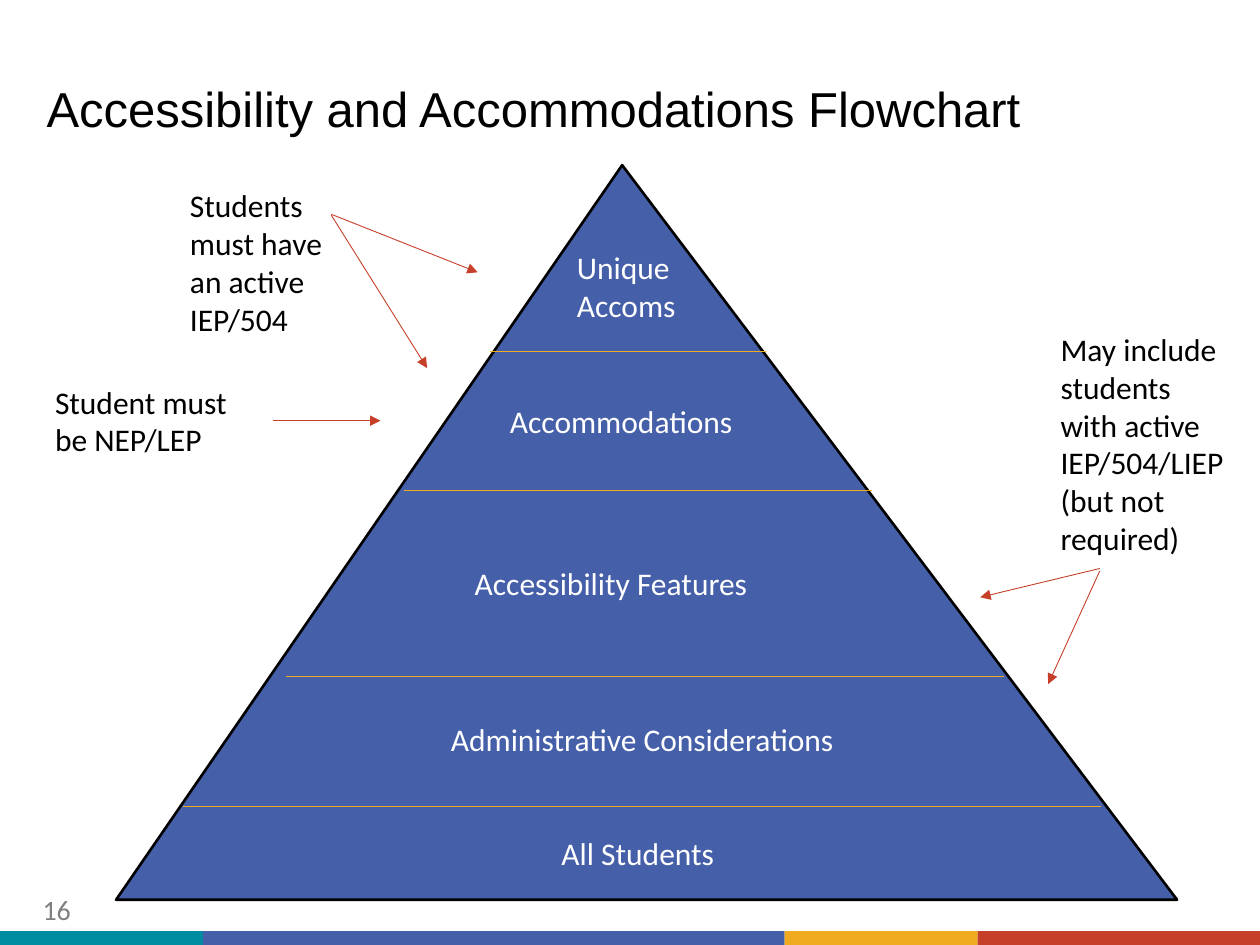
from itertools import pairwise

from lxml.etree import SubElement
from pptx import Presentation
from pptx.dml.color import RGBColor
from pptx.enum.shapes import MSO_CONNECTOR, MSO_SHAPE
from pptx.enum.text import MSO_ANCHOR, MSO_AUTO_SIZE
from pptx.oxml.ns import qn
from pptx.util import Cm, Pt

COLORS = {
    "black": "000000", "white": "FFFFFF", "grey": "808080",
    "teal": "008CA0", "blue": "455FA9", "gold": "EFAA1F", "red": "C63F28",
}


def rgb(name):
    return RGBColor.from_string(COLORS[name])


class SlideBuilder:
    """Holds the text style and the slide being filled; lengths are in cm."""

    def __init__(self, slide, font="Calibri", size=18):
        self.slide = slide
        self.font = font
        self.size = size

    def shape(self, kind, x, y, w, h, fill, line=None):
        sp = self.slide.shapes.add_shape(kind, Cm(x), Cm(y), Cm(w), Cm(h))
        sp.shadow.inherit = False
        sp.fill.solid()
        sp.fill.fore_color.rgb = rgb(fill)
        if line:
            sp.line.color.rgb = rgb(line)
            sp.line.width = Pt(1.5)
        else:
            sp.line.fill.background()
        return sp

    def text(self, lines, x, y, w, h, color="black", size=None, font=None):
        """Each item of lines becomes a paragraph."""
        sp = self.slide.shapes.add_textbox(Cm(x), Cm(y), Cm(w), Cm(h))
        tf = sp.text_frame
        tf.word_wrap = True
        tf.auto_size = MSO_AUTO_SIZE.NONE
        for i, line in enumerate(lines):
            p = tf.add_paragraph() if i else tf.paragraphs[0]
            r = p.add_run()
            r.text = line
            r.font.name = font or self.font
            r.font.size = Pt(size or self.size)
            r.font.color.rgb = rgb(color)
        return tf

    def line(self, x1, y1, x2, y2, color):
        cxn = self.slide.shapes.add_connector(
            MSO_CONNECTOR.STRAIGHT, Cm(x1), Cm(y1), Cm(x2), Cm(y2))
        cxn.line.color.rgb = rgb(color)
        cxn.line.width = Pt(0.5)
        SubElement(cxn._element.spPr, qn("a:effectLst"))
        return cxn

    def arrow(self, x1, y1, x2, y2, color):
        cxn = self.line(x1, y1, x2, y2, color)
        SubElement(cxn.line._get_or_add_ln(), qn("a:tailEnd"), type="triangle")


def main():
    prs = Presentation()
    prs.slide_width, prs.slide_height = Cm(25.4), Cm(19.05)
    s = SlideBuilder(prs.slides.add_slide(prs.slide_layouts[6]))

    bar_edges = [0, 4.09, 15.82, 19.71, 25.4]
    for (left, right), color in zip(pairwise(bar_edges), ["teal", "blue", "gold", "red"]):
        s.shape(MSO_SHAPE.RECTANGLE, left, 18.77, right - left, 0.28, color)

    title = s.text(["Accessibility and Accommodations Flowchart"],
                   0.69, 1.19, 24.71, 2.11, size=28, font="Arial")
    title.vertical_anchor = MSO_ANCHOR.MIDDLE
    title.paragraphs[0].line_spacing = 0.9

    pyramid = s.shape(MSO_SHAPE.ISOSCELES_TRIANGLE, 2.34, 3.33, 21.39, 14.81, "blue", "black")
    pyramid.adjustments[0] = 0.477
    s.text(["16"], 0.61, 17.86, 5.72, 1.02, "grey", size=16)

    dividers = [(9.88, 15.44, 7.09), (8.15, 17.58, 9.88),
                (5.77, 20.24, 13.64), (3.68, 22.2, 16.26)]
    for left, right, y in dividers:
        s.line(left, y, right, y, "gold")

    levels = [
        (["Unique", "Accoms"], 11.38, 4.88, 2.57, 1.8),
        (["Accommodations"], 10.03, 7.98, 5.26, 1.02),
        (["Accessibility Features"], 9.32, 11.25, 6.71, 1.02),
        (["Administrative Considerations"], 8.84, 14.4, 8.43, 1.02),
        (["All Students"], 11.07, 16.69, 7.32, 1.02),
    ]
    for level in levels:
        s.text(*level, color="white")

    notes = [
        ("Students must have an active IEP/504", 3.58, 3.63, 3.86, 3.33),
        ("Student must be NEP/LEP", 0.86, 7.59, 4.6, 1.8),
        ("May include students with active IEP/504/LIEP (but not required)",
         21.13, 6.53, 3.81, 4.88),
    ]
    for note, *box in notes:
        s.text([note], *box)

    arrows = [
        (6.68, 4.32, 9.63, 5.49),
        (6.68, 4.34, 8.61, 7.42),
        (22.17, 11.46, 19.76, 12.04),
        (22.17, 11.51, 21.13, 13.79),
        (5.51, 8.48, 7.67, 8.48),
    ]
    for ends in arrows:
        s.arrow(*ends, "red")

    prs.save("out.pptx")


if __name__ == "__main__":
    main()
